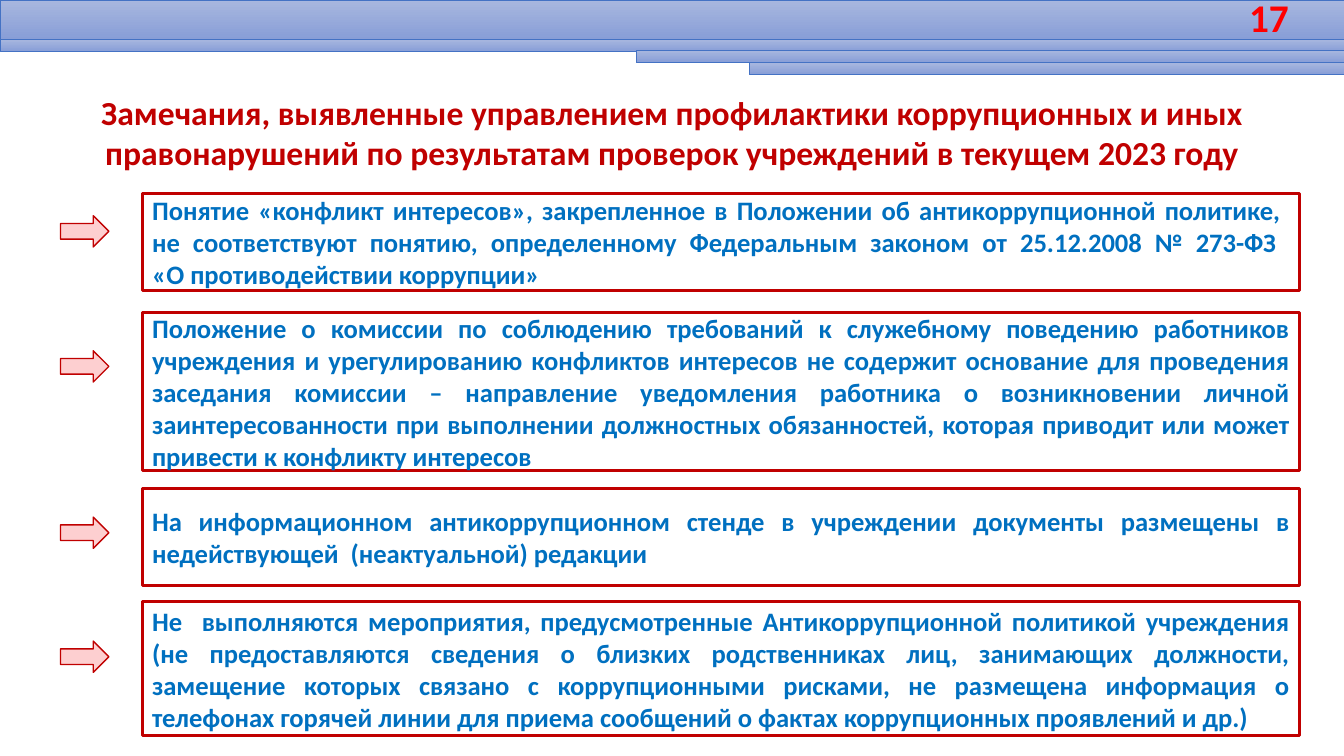
from pptx import Presentation
from pptx.dml.color import RGBColor
from pptx.enum.shapes import MSO_SHAPE as Shape
from pptx.enum.text import MSO_ANCHOR as Anchor, MSO_AUTO_SIZE as AutoSize, PP_ALIGN as Align
from pptx.util import Inches, Pt

DARK_RED = RGBColor(0xC0, 0x00, 0x00)
BRIGHT_RED = RGBColor(0xFF, 0x00, 0x00)
TEXT_BLUE = RGBColor(0x00, 0x70, 0xC0)
PALE_PINK = RGBColor(0xFD, 0xCF, 0xD0)
BAND_LINE = RGBColor(0x44, 0x72, 0xC4)
BAND_TOP = RGBColor(0xA8, 0xB7, 0xDF)
BAND_BOTTOM = RGBColor(0x88, 0x9E, 0xD7)

SLIDE_WIDTH, SLIDE_HEIGHT = 13.33, 7.5
REMARK_LEFT, REMARK_WIDTH = 1.41, 11.48
ARROW_LEFT, ARROW_WIDTH, ARROW_HEIGHT = 0.6, 0.48, 0.31

# left, top, height; every band runs to the right edge
HEADER_BANDS = [(0, 0, 0.39), (0, 0.39, 0.12), (6.31, 0.5, 0.12), (7.43, 0.62, 0.12)]

HEADING = ("Замечания, выявленные управлением профилактики коррупционных и иных "
           "правонарушений по результатам проверок учреждений в текущем 2023 году")

# box top, box height, arrow top, text
REMARKS = [
    (1.92, 0.96, 2.14,
     "Понятие «конфликт интересов», закрепленное в Положении об антикоррупционной политике,  "
     "не соответствуют понятию, определенному Федеральным законом от 25.12.2008 № 273-ФЗ \n"
     "«О противодействии коррупции»"),
    (3.1, 1.57, 3.48,
     "Положение о комиссии по соблюдению требований к служебному поведению работников "
     "учреждения и урегулированию конфликтов интересов не содержит основание для проведения "
     "заседания комиссии – направление уведомления работника о возникновении личной "
     "заинтересованности при выполнении должностных обязанностей, которая приводит или может "
     "привести к конфликту интересов"),
    (4.85, 0.96, 5.13,
     "На информационном антикоррупционном стенде в учреждении документы размещены в "
     "недействующей  (неактуальной) редакции"),
    (5.97, 1.33, 6.36,
     "Не  выполняются мероприятия, предусмотренные Антикоррупционной политикой учреждения "
     "(не предоставляются сведения о близких родственниках лиц, занимающих должности, "
     "замещение которых связано с коррупционными рисками, не размещена информация о "
     "телефонах горячей линии для приема сообщений о фактах коррупционных проявлений и др.)"),
]


def apply_format(target, values):
    for name, value in values.items():
        setattr(target, name, value)


class RemarksSlide:
    """Holds the text style and the slide being filled."""

    font_style = {"name": "Calibri", "bold": True}
    frame_style = {"word_wrap": True, "auto_size": AutoSize.NONE,
                   "margin_left": Inches(0.1), "margin_right": Inches(0.1),
                   "margin_top": Inches(0.05), "margin_bottom": Inches(0.05)}

    def __init__(self, presentation):
        self.slide = presentation.slides.add_slide(presentation.slide_layouts[5])

    def put_text(self, holder, text, size, color, align, anchor=Anchor.MIDDLE):
        frame = holder.text_frame
        apply_format(frame, {**self.frame_style, "vertical_anchor": anchor})
        paragraph = frame.paragraphs[0]
        paragraph.text = text
        paragraph.alignment = align
        for run in paragraph.runs:
            apply_format(run.font, {**self.font_style, "size": Pt(size)})
            run.font.color.rgb = color

    def outlined(self, kind, box, line_color, line_width):
        shape = self.slide.shapes.add_shape(kind, *map(Inches, box))
        shape.shadow.inherit = False
        shape.line.color.rgb = line_color
        shape.line.width = Pt(line_width)
        return shape

    def band(self, left, top, height):
        box = (left, top, SLIDE_WIDTH - left, height)
        fill = self.outlined(Shape.RECTANGLE, box, BAND_LINE, 0.5).fill
        fill.gradient()
        fill.gradient_angle = 270
        for stop, color in zip(fill.gradient_stops, (BAND_TOP, BAND_BOTTOM)):
            stop.color.rgb = color

    def page_number(self, number):
        holder = self.slide.shapes.add_textbox(*map(Inches, (11.63, -0.05, 1.25, 0.44)))
        self.put_text(holder, number, 28, BRIGHT_RED, Align.RIGHT)

    def heading(self, text):
        title = self.slide.shapes.title
        place = {"left": 0.6, "top": 0.86, "width": 12.13, "height": 0.91}
        apply_format(title, {side: Inches(length) for side, length in place.items()})
        self.put_text(title, text, 24, DARK_RED, Align.CENTER, Anchor.TOP)

    def remark(self, top, height, text):
        box = (REMARK_LEFT, top, REMARK_WIDTH, height)
        frame = self.outlined(Shape.RECTANGLE, box, DARK_RED, 2.25)
        frame.fill.background()
        self.put_text(frame, text, 19, TEXT_BLUE, Align.JUSTIFY)

    def arrow(self, top):
        box = (ARROW_LEFT, top, ARROW_WIDTH, ARROW_HEIGHT)
        pointer = self.outlined(Shape.RIGHT_ARROW, box, DARK_RED, 1)
        pointer.fill.solid()
        pointer.fill.fore_color.rgb = PALE_PINK


def main():
    presentation = Presentation()
    presentation.slide_width = Inches(SLIDE_WIDTH)
    presentation.slide_height = Inches(SLIDE_HEIGHT)
    page = RemarksSlide(presentation)
    for band in HEADER_BANDS:
        page.band(*band)
    page.page_number("17")
    page.heading(HEADING)
    for top, height, arrow_top, text in REMARKS:
        page.remark(top, height, text)
        page.arrow(arrow_top)
    presentation.save("out.pptx")


if __name__ == "__main__":
    main()
